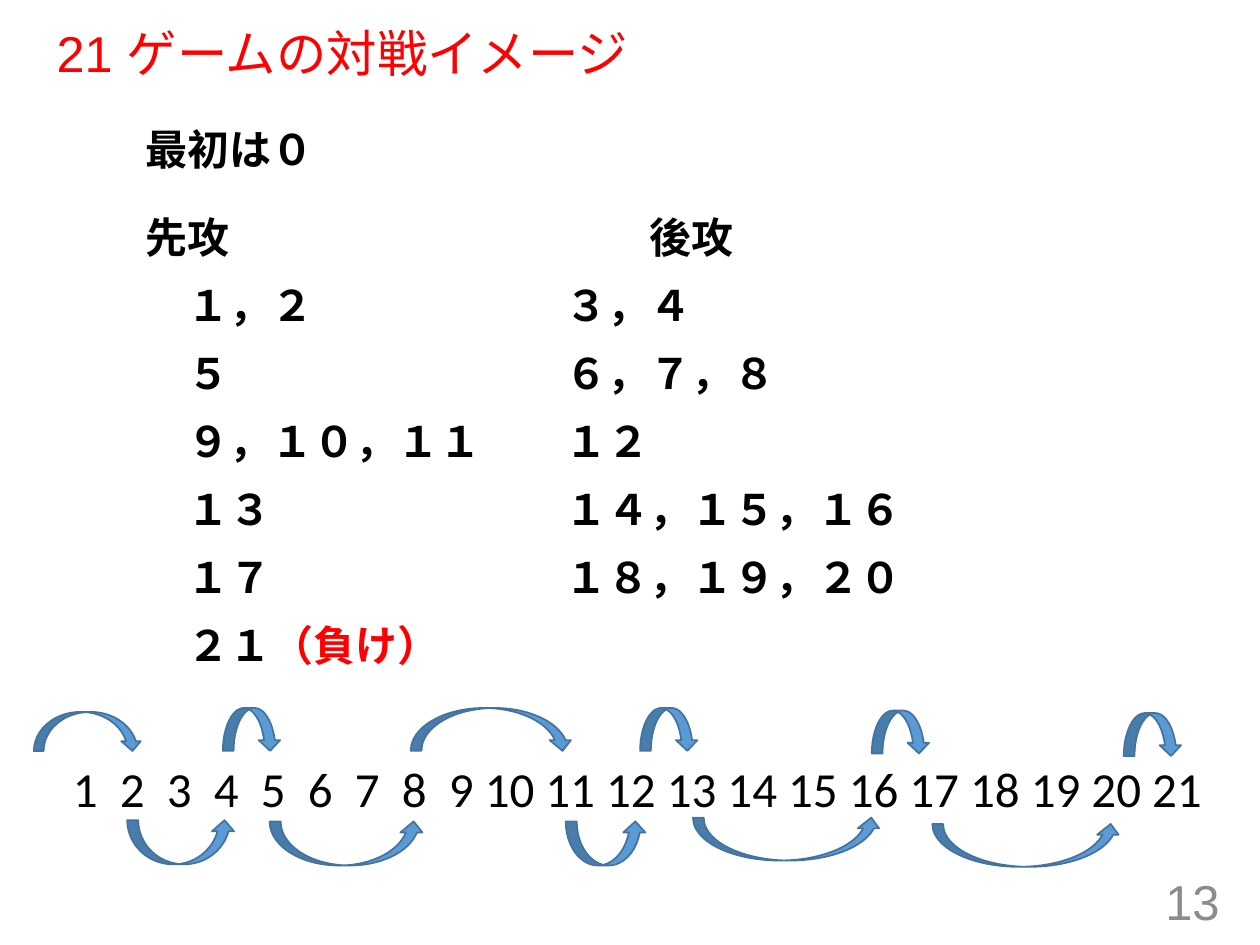
import pptx
import pptx.dml.color
import pptx.enum.shapes
import pptx.enum.text
import pptx.oxml
import pptx.oxml.ns
import pptx.util
from lxml import etree

Pt = pptx.util.Pt
RGB = pptx.dml.color.RGBColor
ALIGN = pptx.enum.text.PP_ALIGN
ANCHOR = pptx.enum.text.MSO_ANCHOR

RED = RGB(0xFF, 0, 0)
BLACK = RGB(0, 0, 0)
GRAY = RGB(0x8C, 0x8C, 0x8C)
BLUE = RGB(0x5B, 0x9B, 0xD5)
EDGE = RGB(0x43, 0x73, 0x9E)


class Deck:
    font = "Arial"

    def __init__(self):
        self.prs = pptx.Presentation()
        self.prs.slide_width, self.prs.slide_height = Pt(720), Pt(540)
        self.slide = self.prs.slides.add_slide(self.prs.slide_layouts[5])

    def style(self, run, size, color, bold=False, font=None):
        run.font.name = font or self.font
        run.font.size = Pt(size)
        run.font.bold = bold
        run.font.color.rgb = color

    def tabs(self, para, stops):
        qn = pptx.oxml.ns.qn
        group = etree.SubElement(para._p.get_or_add_pPr(), qn("a:tabLst"))
        for stop in stops:
            etree.SubElement(group, qn("a:tab"), pos=str(Pt(stop)), algn="l")

    def title(self, text, x, y, w, h):
        box = self.slide.shapes.title
        box.left, box.top, box.width, box.height = map(Pt, (x, y, w, h))
        frame = box.text_frame
        frame.text = text
        frame.vertical_anchor = ANCHOR.MIDDLE
        frame.auto_size = pptx.enum.text.MSO_AUTO_SIZE.NONE
        para = frame.paragraphs[0]
        para.alignment, para.line_spacing = ALIGN.LEFT, 0.9
        self.style(para.runs[0], 28.8, RED)

    def text(self, lines, x, y, w, h, size, color, bold=False, font=None,
             stops=(), gap=0, align=ALIGN.LEFT, anchor=ANCHOR.TOP):
        box = self.slide.shapes.add_textbox(*map(Pt, (x, y, w, h)))
        frame = box.text_frame
        frame.word_wrap = True
        frame.vertical_anchor = anchor
        frame.text = "\n".join(lines)
        for i, para in enumerate(frame.paragraphs):
            if stops:
                self.tabs(para, stops)
            para.alignment = align
            if i:
                para.space_before = Pt(gap)
            for run in para.runs:
                self.style(run, size, color, bold, font)
        return frame

    def arrow(self, x, y, w, h, flip=False):
        kind = pptx.enum.shapes.MSO_SHAPE.CURVED_DOWN_ARROW
        shape = self.slide.shapes.add_shape(kind, *map(Pt, (x, y, w, h)))
        shape.shadow.inherit = False
        shape.fill.solid()
        shape.fill.fore_color.rgb = BLUE
        shape.line.color.rgb = EDGE
        shape.line.width = Pt(1)
        if flip:
            shape._element.spPr.xfrm.set("flipV", "1")


def main():
    deck = Deck()
    deck.title("21 ゲームの対戦イメージ", 25.2, 13.7, 666, 36.7)
    deck.text(["13"], 542, 500.4, 162, 28.8, 28, GRAY,
              align=ALIGN.RIGHT, anchor=ANCHOR.MIDDLE)

    # Turns of both players
    deck.text(["最初は０"], 76.3, 67, 524, 42.5, 24, BLACK, bold=True)
    turns = [("１，２", "３，４"), ("５", "６，７，８"), ("９，１０，１１", "１２"),
             ("１３", "１４，１５，１６"), ("１７", "１８，１９，２０")]
    lines = ["先攻\t\t後攻"] + [f"\t{a}\t{b}" for a, b in turns] + ["\t２１"]
    frame = deck.text(lines, 76.3, 117.4, 549, 311.8, 24, BLACK, bold=True,
                      stops=(24, 240, 288), gap=10)
    lost = frame.paragraphs[-1].add_run()
    lost.text = "（負け）"
    deck.style(lost, 24, RED, bold=True)

    # Number line: single digits on tab stops, then plain spaces
    ones = "\t".join(str(n) for n in range(1, 10))
    tens = " ".join(str(n) for n in range(10, 22))
    deck.text([f"{ones} {tens}"], 34.6, 429.8, 669.6, 41, 28, BLACK,
              font="Calibri", stops=[26.86 * n for n in range(1, 9)])

    # First player's moves above, second player's below
    above = [(19.4, 406.8, 61.9, 22.3), (127.4, 404.6, 33.1, 24.5),
             (234.7, 404.6, 92.9, 24.5), (365.8, 404.6, 33.1, 24.5),
             (498.2, 406.1, 33.1, 24.5), (642.2, 407.5, 33.1, 24.5)]
    below = [(72.7, 468.7, 61.9, 25.2), (154.1, 469.4, 88.6, 25.2),
             (323.3, 469.4, 46.1, 25.2), (396, 467.3, 108, 24.5),
             (532.8, 470.9, 108, 24.5)]
    for spot in above:
        deck.arrow(*spot)
    for spot in below:
        deck.arrow(*spot, flip=True)

    deck.prs.save("out.pptx")


if __name__ == "__main__":
    main()
